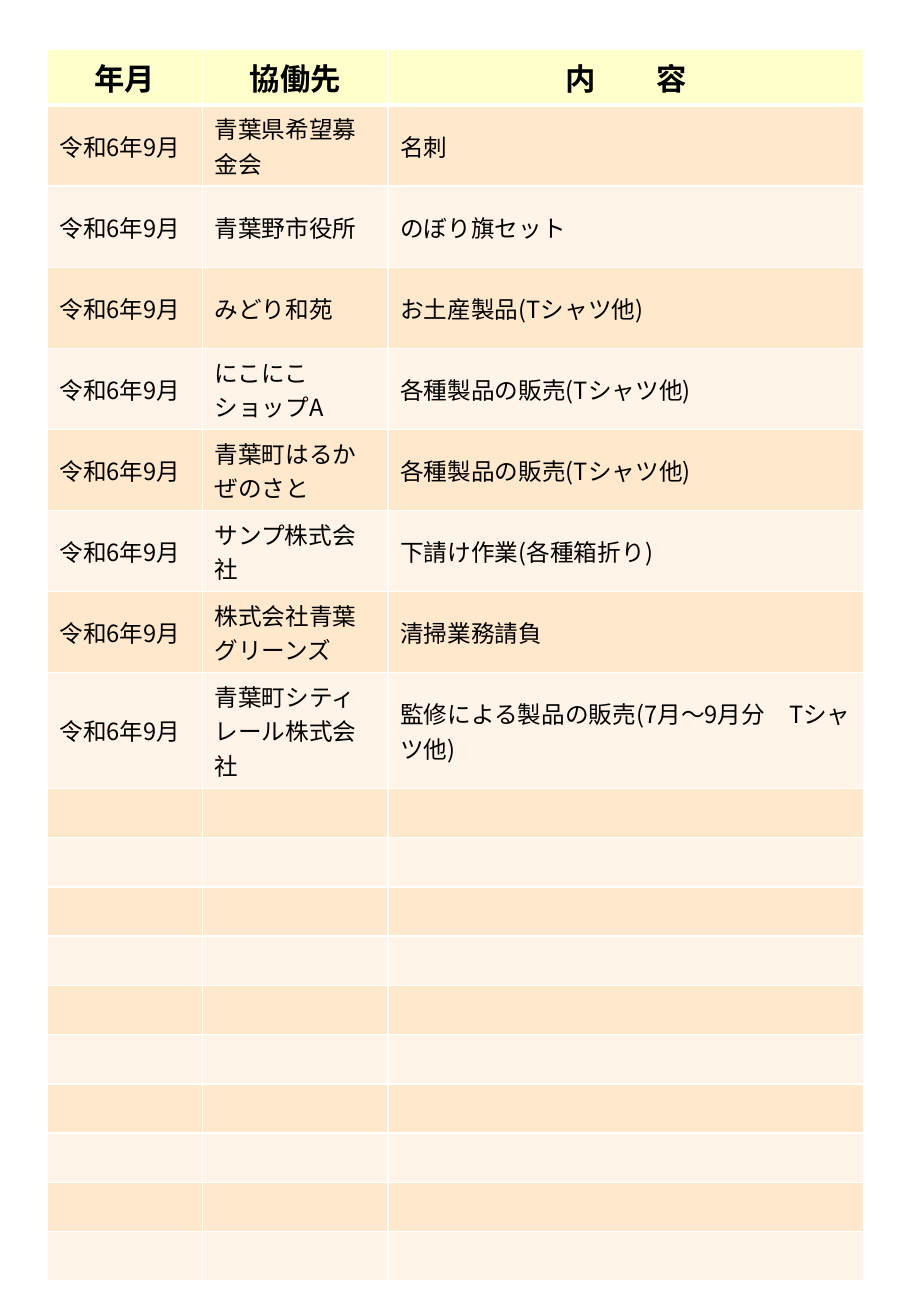
"""Builds a one-page table of monthly collaboration partners."""
from dataclasses import dataclass
from typing import NamedTuple

from lxml import etree
from pptx import Presentation, util as u
from pptx.dml.color import RGBColor
from pptx.enum import text
from pptx.oxml import ns
from pptx.table import Table, _Cell


@dataclass(frozen=True)
class Theme:
    font: str = "Noto Sans CJK JP"
    ink: str = "000000"
    header_fill: str = "FFFFCC"
    band_fills: tuple[str, str] = ("FFE8CC", "FFF4E7")
    border: str = "FFFFFF"
    thin: float = 1
    thick: float = 3
    header_size: float = 18
    body_size: float = 14


class Collaboration(NamedTuple):
    month: str
    partner: str
    content: str


THEME = Theme()
SLIDE_SIZE = (540, 779.76)
TABLE_ORIGIN = (28, 29)
COLUMN_WIDTHS = (92, 110, 282)
ROW_HEIGHT = 29.2
EMPTY_ROWS = 10
MONTH = "令和6年9月"
HEADER = Collaboration("年月", "協働先", "内　　容")
COLLABORATIONS = [
    Collaboration(MONTH, "青葉県希望募金会", "名刺"),
    Collaboration(MONTH, "青葉野市役所", "のぼり旗セット"),
    Collaboration(MONTH, "みどり和苑", "お土産製品(Tシャツ他)"),
    Collaboration(MONTH, "にこにこショップA", "各種製品の販売(Tシャツ他)"),
    Collaboration(MONTH, "青葉町はるかぜのさと", "各種製品の販売(Tシャツ他)"),
    Collaboration(MONTH, "サンプ株式会社", "下請け作業(各種箱折り)"),
    Collaboration(MONTH, "株式会社青葉グリーンズ", "清掃業務請負"),
    Collaboration(MONTH, "青葉町シティレール株式会社", "監修による製品の販売(7月～9月分　Tシャツ他)"),
]


def write_text(cell: _Cell, content: str, *, size: float, bold: bool = False,
               align: text.PP_ALIGN = text.PP_ALIGN.LEFT,
               anchor: text.MSO_ANCHOR = text.MSO_ANCHOR.MIDDLE) -> None:
    cell.vertical_anchor = anchor
    paragraph = cell.text_frame.paragraphs[0]
    paragraph.alignment = align
    run = paragraph.add_run()
    run.text = content
    run.font.name = THEME.font
    run.font.size = u.Pt(size)
    run.font.bold = bold
    run.font.color.rgb = RGBColor.from_string(THEME.ink)
    east_asian = etree.SubElement(run.font._element, ns.qn("a:ea"))
    east_asian.set("typeface", THEME.font)


def set_borders(cell: _Cell, *, top: float, bottom: float) -> None:
    properties = cell._tc.get_or_add_tcPr()
    widths = {"a:lnL": THEME.thin, "a:lnR": THEME.thin, "a:lnT": top, "a:lnB": bottom}
    for position, (side, width) in enumerate(widths.items()):
        line = etree.Element(ns.qn(side), w=str(u.Pt(width)))
        fill = etree.SubElement(line, ns.qn("a:solidFill"))
        etree.SubElement(fill, ns.qn("a:srgbClr"), val=THEME.border)
        properties.insert(position, line)


def style_row(table: Table, row: int) -> None:
    color = THEME.header_fill if row == 0 else THEME.band_fills[(row - 1) % 2]
    table.rows[row].height = u.Pt(ROW_HEIGHT)
    for cell in table.rows[row].cells:
        cell.fill.solid()
        cell.fill.fore_color.rgb = RGBColor.from_string(color)
        set_borders(cell, top=THEME.thick if row == 1 else THEME.thin,
                    bottom=THEME.thick if row == 0 else THEME.thin)


def fill_table(table: Table) -> None:
    for column, width in zip(table.columns, COLUMN_WIDTHS):
        column.width = u.Pt(width)
    for row in range(len(table.rows)):
        style_row(table, row)
    for column, title in enumerate(HEADER):
        write_text(table.cell(0, column), title, size=THEME.header_size, bold=True,
                   align=text.PP_ALIGN.CENTER, anchor=text.MSO_ANCHOR.TOP)
    for row, collaboration in enumerate(COLLABORATIONS, start=1):
        for column, content in enumerate(collaboration):
            write_text(table.cell(row, column), content, size=THEME.body_size)


def main() -> None:
    presentation = Presentation()
    presentation.slide_width, presentation.slide_height = map(u.Pt, SLIDE_SIZE)
    slide = presentation.slides.add_slide(presentation.slide_layouts[6])
    row_count = 1 + len(COLLABORATIONS) + EMPTY_ROWS
    frame = slide.shapes.add_table(
        row_count, len(COLUMN_WIDTHS), *map(u.Pt, TABLE_ORIGIN),
        u.Pt(sum(COLUMN_WIDTHS)), u.Pt(ROW_HEIGHT * row_count))
    fill_table(frame.table)
    presentation.save("out.pptx")


if __name__ == "__main__":
    main()
